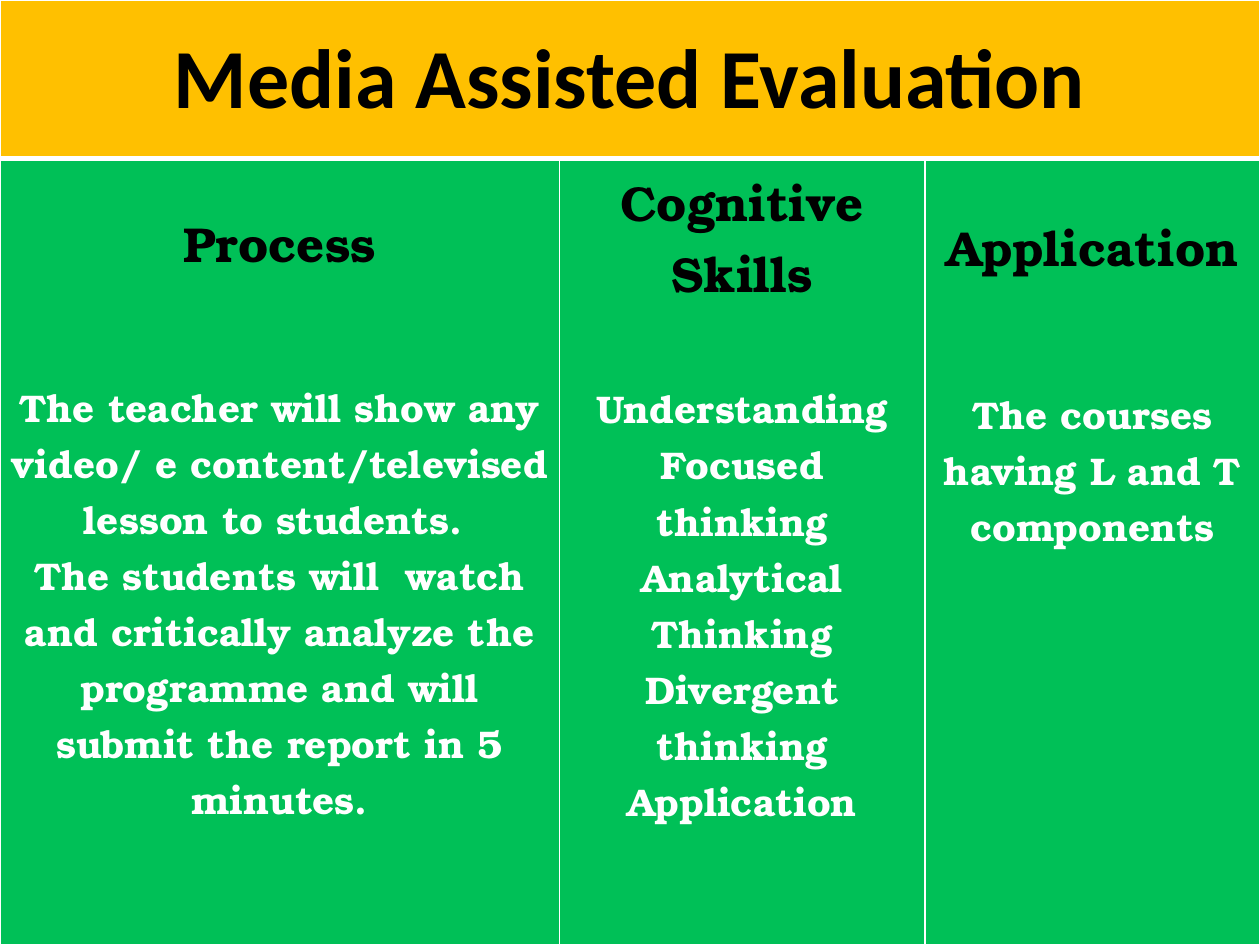
from pptx import Presentation
from pptx.dml.color import RGBColor as Color
from pptx.enum.text import MSO_ANCHOR as Anchor, PP_ALIGN as Align
from pptx.oxml import parse_xml
from pptx.oxml.ns import nsdecls
from pptx.util import Pt

COLORS = {"title": "FFC000", "column": "00C057", "dark": "000000", "light": "FFFFFF"}
TITLE_FONT, BODY_FONT = "Calibri", "TeX Gyre Bonum"
WIDTH, HEIGHT, TITLE_HEIGHT = 720, 540, 90.72
COLUMN_WIDTHS = (319.68, 208.8, 191.52)
COLUMNS = (
    {
        "heading": "Process", "top": 27, "gap": 57.5,
        "lines": (
            "The teacher will show any video/ e content/televised lesson to students. ",
            "The students will  watch and critically analyze the programme "
            "and will submit the report in 5 minutes.",
        ),
    },
    {
        "heading": "Cognitive Skills", "top": 3.6, "gap": 41,
        "lines": ("Understanding", "Focused thinking", "Analytical Thinking",
                  "Divergent thinking", "Application"),
    },
    {
        "heading": "Application", "top": 29.5, "gap": 59,
        "lines": ("The courses having L and T components",),
    },
)


def format_paragraph(paragraph, size, font, color):
    paragraph.alignment = Align.CENTER
    for run in paragraph.runs:
        run.font.size = Pt(size)
        run.font.name = font
        run.font.bold = True
        run.font.color.rgb = Color.from_string(COLORS[color])


def style_cell(cell, fill, top_line, bottom_line, top=3.6):
    cell.margin_left = cell.margin_right = Pt(5.76)
    cell.margin_top, cell.margin_bottom = Pt(top), Pt(3.6)
    borders = {"lnL": 1, "lnR": 1, "lnT": top_line, "lnB": bottom_line}
    properties = cell._tc.get_or_add_tcPr()
    for tag, width in borders.items():
        properties.append(parse_xml(
            f'<a:{tag} {nsdecls("a")} w="{Pt(width)}"><a:solidFill>'
            f'<a:srgbClr val="{COLORS["light"]}"/></a:solidFill></a:{tag}>'))
    cell.fill.solid()
    cell.fill.fore_color.rgb = Color.from_string(COLORS[fill])


def fill_title(table):
    for cell in table.rows[0].cells:
        style_cell(cell, "title", 1, 3)
    title = table.cell(0, 0)
    title.merge(table.cell(0, len(COLUMNS) - 1))
    title.vertical_anchor = Anchor.MIDDLE
    title.text_frame.text = "Media Assisted Evaluation"
    format_paragraph(title.text_frame.paragraphs[0], 48, TITLE_FONT, "dark")


def fill_column(cell, column):
    style_cell(cell, "column", 3, 1, column["top"])
    cell.vertical_anchor = Anchor.TOP
    cell.text_frame.text = "\n".join((column["heading"], *column["lines"]))
    heading, *lines = cell.text_frame.paragraphs
    format_paragraph(heading, 28, BODY_FONT, "dark")
    for paragraph in lines:
        format_paragraph(paragraph, 22, BODY_FONT, "light")
    lines[0].space_before = Pt(column["gap"])


def add_evaluation_table(slide, left, top, width, height):
    frame = slide.shapes.add_table(
        2, len(COLUMNS), Pt(left), Pt(top), Pt(width), Pt(height))
    table = frame.table
    for table_column, column_width in zip(table.columns, COLUMN_WIDTHS):
        table_column.width = Pt(column_width)
    table.rows[0].height = Pt(TITLE_HEIGHT)
    table.rows[1].height = Pt(height - TITLE_HEIGHT)
    fill_title(table)
    for cell, column in zip(table.rows[1].cells, COLUMNS):
        fill_column(cell, column)


def main():
    presentation = Presentation()
    presentation.slide_width, presentation.slide_height = Pt(WIDTH), Pt(HEIGHT)
    slide = presentation.slides.add_slide(presentation.slide_layouts[6])
    add_evaluation_table(slide, 0, 0, WIDTH, HEIGHT)
    presentation.save("out.pptx")


if __name__ == "__main__":
    main()
